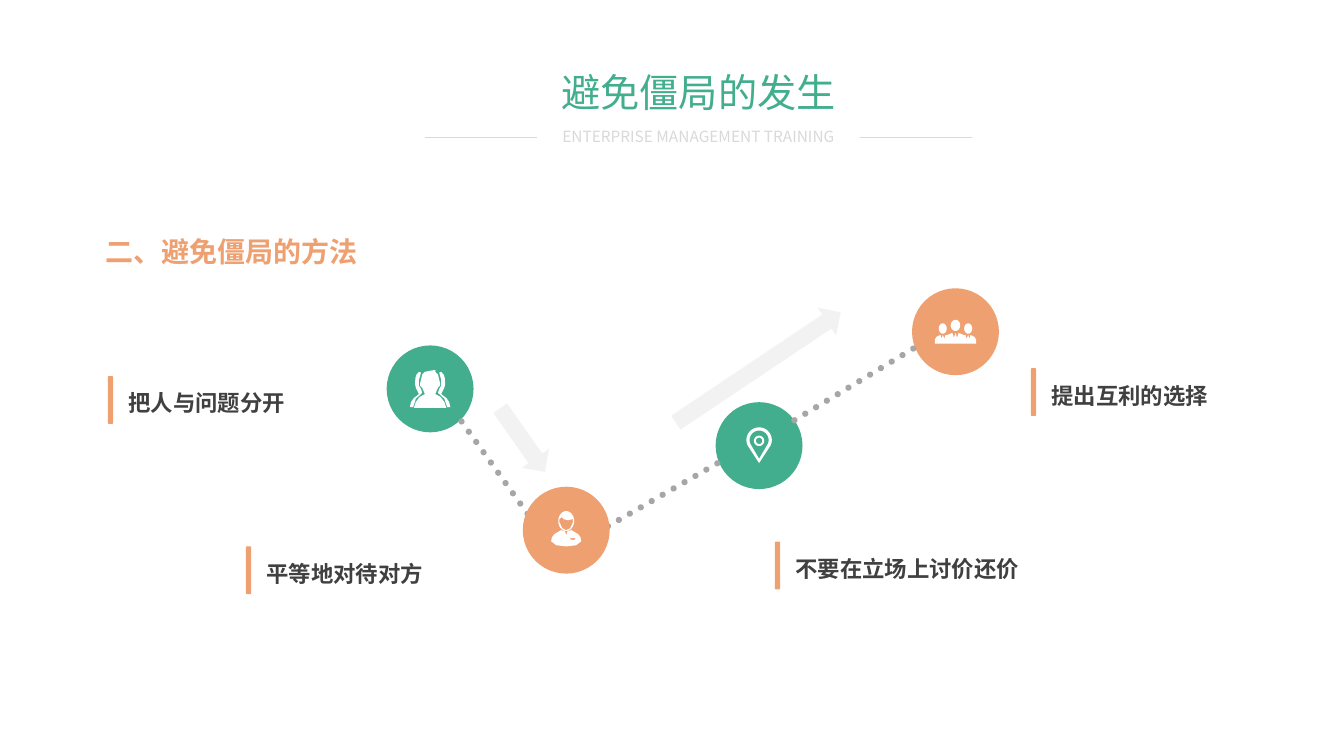
from math import cos, pi, sin

from lxml.etree import SubElement
from pptx import Presentation
from pptx.dml.color import RGBColor as RGB
from pptx.enum.dml import MSO_LINE as Dash
from pptx.enum.shapes import MSO_CONNECTOR as Link, MSO_SHAPE as Kind
from pptx.enum.text import MSO_ANCHOR as Anchor, PP_ALIGN as Align
from pptx.oxml.ns import qn
from pptx.util import Cm, Pt

GREEN = RGB(0x42, 0xAE, 0x8E)
ORANGE = RGB(0xEE, 0xA0, 0x71)
WHITE = RGB(0xFF, 0xFF, 0xFF)
PALE = RGB(0xF2, 0xF2, 0xF2)
LIGHT = RGB(0xD9, 0xD9, 0xD9)
GREY = RGB(0xA6, 0xA6, 0xA6)
DARK = RGB(0x40, 0x40, 0x40)
FONT = "Noto Sans CJK SC"
DISC = 2.19


def paint(shape, color):
    """Give a shape a flat fill without line or shadow."""
    shape.shadow.inherit = False
    shape.fill.solid()
    shape.fill.fore_color.rgb = color
    shape.line.fill.background()


def block(slide, kind, box, color, turn=0):
    """Add a flat preset shape in a box."""
    shape = slide.shapes.add_shape(kind, *map(Cm, box))
    paint(shape, color)
    shape.rotation = turn


def label(slide, box, text, size, color, bold=False, align=Align.LEFT, inset=True):
    """Add one line of text in a box and return its paragraph."""
    frame = slide.shapes.add_textbox(*map(Cm, box)).text_frame
    frame.word_wrap = True
    frame.vertical_anchor = Anchor.TOP
    if not inset:
        frame.margin_left = frame.margin_right = 0
        frame.margin_top = frame.margin_bottom = 0
    line = frame.paragraphs[0]
    line.text = text
    line.alignment = align
    for run in line.runs:
        font = run.font
        font.name, font.size, font.bold = FONT, Pt(size), bold
        font.color.rgb = color
        SubElement(font._element, qn("a:ea")).set("typeface", FONT)
    return line


def rule(slide, ends, color, width, dotted=False):
    """Draw a straight line, solid or of round dots."""
    link = slide.shapes.add_connector(Link.STRAIGHT, *map(Cm, ends))
    link.line.color.rgb = color
    link.line.width = Pt(width)
    if dotted:
        link.line.dash_style = Dash.ROUND_DOT
        link.line._get_or_add_ln().set("cap", "rnd")
    SubElement(link._element.spPr, qn("a:effectLst"))


def arc(x, y, wide, high, start=0, sweep=360):
    """Return points along an ellipse with the given radii."""
    turns = [(start + sweep * i / 32) * pi / 180 for i in range(33)]
    return [(x + wide * cos(t), y + high * sin(t)) for t in turns]


def mirror(half):
    """Close a left or right half with its reflection."""
    return half + [(-x, y) for x, y in reversed(half)]


def drop(size, tip):
    """Return the outline of a map pin."""
    return arc(0, -0.14, size, size, 155, 230) + [(0, tip)]


def icon(slide, x, y, loops):
    """Draw white outlines around a centre point."""
    loops = [[(Cm(x + dx), Cm(y + dy)) for dx, dy in loop] for loop in loops]
    pen = slide.shapes.build_freeform(*loops[0][0], scale=1.0)
    for loop in loops:
        pen.move_to(*loop[0])
        pen.add_line_segments(loop[1:], close=True)
    paint(pen.convert_to_shape(), WHITE)


SIDE = [(0.23, -0.41), (0.28, -0.43), (0.35, -0.35), (0.37, -0.27),
        (0.38, -0.13), (0.36, -0.03), (0.28, 0.13), (0.41, 0.23),
        (0.48, 0.33), (0.51, 0.46), (0.43, 0.46), (0.36, 0.25),
        (0.2, 0.1), (0.23, 0), (0.28, -0.08), (0.28, -0.23)]
BUST = [(-0.13, -0.43), (-0.2, -0.36), (-0.23, -0.23), (-0.25, -0.15),
        (-0.25, -0.08), (-0.2, -0.03), (-0.13, 0.13), (-0.26, 0.2),
        (-0.36, 0.33), (-0.41, 0.48)]
TEAM = [SIDE, [(-x, y) for x, y in SIDE], mirror(BUST) + [(0.13, -0.48)]]

COATS = [(-0.52, 0.3), (-0.52, 0.2), (-0.48, 0.13), (-0.38, 0.08),
         (-0.35, 0.18), (-0.32, 0.08), (-0.28, 0.18), (-0.25, 0.08),
         (-0.2, 0.08), (-0.08, 0.03), (-0.04, 0.15), (0, 0.03)]
CROWD = [mirror(COATS), arc(0, -0.16, 0.12, 0.14),
         arc(-0.32, -0.08, 0.1, 0.13), arc(0.32, -0.08, 0.1, 0.13)]

PIN = [drop(0.32, 0.44), drop(0.24, 0.33),
       arc(0, -0.12, 0.13, 0.13), arc(0, -0.12, 0.08, 0.08)]

CHEST = [(0, 0.41), (-0.25, 0.38), (-0.38, 0.28), (-0.36, 0.18),
         (-0.3, 0.1), (-0.13, 0), (-0.03, 0.03), (0, 0.13)]
FACE = [(-0.12, -0.33), (-0.05, -0.27), (0.05, -0.25), (0.17, -0.28),
        (0.17, -0.2), (0.1, -0.05), (0, 0), (-0.1, -0.05),
        (-0.17, -0.2), (-0.17, -0.28)]
BADGE = [(0.1, 0.2), (0.23, 0.2), (0.23, 0.23), (0.18, 0.25), (0.1, 0.23)]
SOLO = [mirror(CHEST), BADGE, arc(0, -0.23, 0.2, 0.25), FACE]


def header(slide, x, y, wide):
    """Place the title and its subtitle between two rules."""
    label(slide, (x, y + 1.47, wide, 0.74), "ENTERPRISE MANAGEMENT TRAINING",
          11, LIGHT, align=Align.CENTER)
    for left in (x, x + wide - 2.81):
        rule(slide, (left, y + 1.85, left + 2.81, y + 1.85), LIGHT, 0.5)
    label(slide, (x, y, wide, 1.45), "避免僵局的发生", 28, GREEN,
          align=Align.CENTER)


def node(slide, x, y, color, loops):
    """Place a disc with its icon around a centre point."""
    block(slide, Kind.OVAL, (x - DISC / 2, y - DISC / 2, DISC, DISC), color)
    icon(slide, x, y, loops)


def trail(slide, x, y):
    """Place the four discs, dotted links and arrows."""
    nodes = [(21.36, 1.1, ORANGE, CROWD), (16.41, 3.97, GREEN, PIN),
             (8.12, 2.54, GREEN, TEAM), (11.55, 6.1, ORANGE, SOLO)]
    links = [(8.91, 3.36, 10.67, 5.82), (12.6, 6, 15.47, 4.35),
             (17.3, 3.33, 20.5, 1.4)]
    arrows = [(9.47, 3.41, 1.96, 54.9), (13.89, 1.58, 5, 326.2)]
    for dx, dy, color, loops in nodes[:3]:
        node(slide, x + dx, y + dy, color, loops)
    for ax, ay, bx, by in links:
        rule(slide, (x + ax, y + ay, x + bx, y + by), GREY, 4.5, True)
    for dx, dy, wide, turn in arrows:
        block(slide, Kind.RIGHT_ARROW, (x + dx, y + dy, wide, 0.84), PALE, turn)
    dx, dy, color, loops = nodes[3]
    node(slide, x + dx, y + dy, color, loops)


def caption(slide, x, y, wide, text):
    """Place a caption beside its upright bar."""
    line = label(slide, (x + 0.52, y, wide, 0.91), text, 16, DARK, True,
                 Align.JUSTIFY, False)
    line.line_spacing = 1.5
    block(slide, Kind.ROUNDED_RECTANGLE, (x, y, 0.13, 1.2), ORANGE)


def main():
    """Build the slide and save it."""
    deck = Presentation()
    deck.slide_width, deck.slide_height = Cm(33.87), Cm(19.05)
    slide = deck.slides.add_slide(deck.slide_layouts[6])
    header(slide, 10.72, 1.6, 13.77)
    label(slide, (2.41, 5.79, 17.15, 1.12), "二、避免僵局的方法", 20, ORANGE, True)
    trail(slide, 2.72, 7.26)
    for x, y, wide, text in [(2.72, 9.48, 5.26, "把人与问题分开"),
                             (6.2, 13.77, 5.26, "平等地对待对方"),
                             (19.53, 13.65, 10, "不要在立场上讨价还价"),
                             (25.98, 9.28, 5.26, "提出互利的选择")]:
        caption(slide, x, y, wide, text)
    deck.save("out.pptx")


if __name__ == "__main__":
    main()
